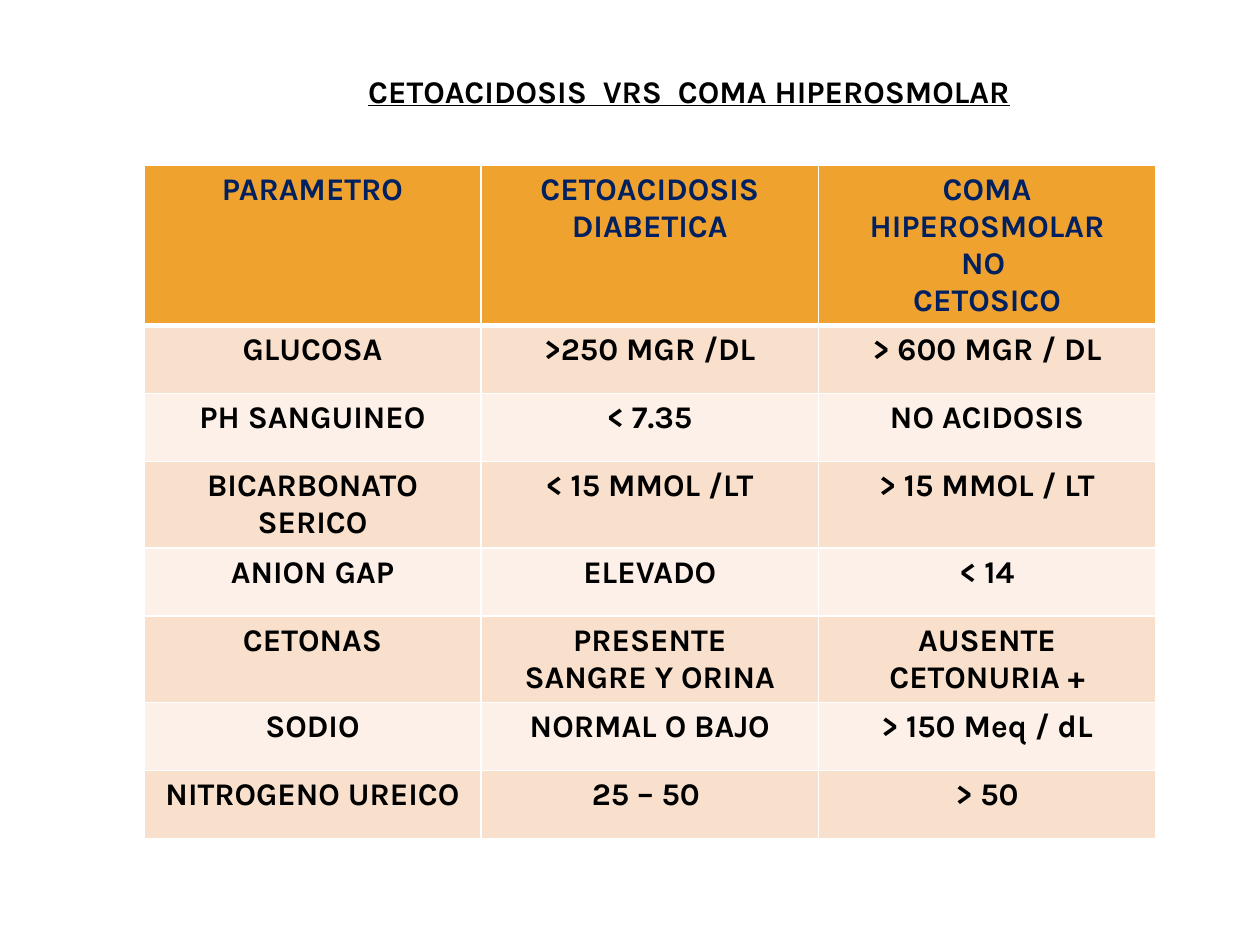
from dataclasses import dataclass

from lxml import etree
from pptx import Presentation
from pptx.dml.color import RGBColor
from pptx.enum.text import MSO_ANCHOR, MSO_AUTO_SIZE, PP_ALIGN
from pptx.oxml.ns import qn
from pptx.util import Cm, Pt

CENTER = PP_ALIGN.CENTER
TOP = MSO_ANCHOR.TOP
NO_AUTOFIT = MSO_AUTO_SIZE.NONE
TITLE_ONLY = 5


@dataclass(frozen=True)
class Theme:
    font: str = "Karla"
    size: int = 18
    text: str = "000000"
    header_text: str = "002060"
    header_fill: str = "F0A22E"
    bands: tuple = ("F9E0CD", "FCF0E8")
    border: str = "FFFFFF"
    thin: int = 1
    thick: int = 3


THEME = Theme()

TITLE = "CETOACIDOSIS  VRS  COMA HIPEROSMOLAR"
ROWS = [
    ("PARAMETRO", "CETOACIDOSIS\nDIABETICA", "COMA HIPEROSMOLAR\nNO \nCETOSICO"),
    ("GLUCOSA", ">250 MGR /DL", "> 600 MGR / DL"),
    ("PH SANGUINEO", "< 7.35", "NO ACIDOSIS"),
    ("BICARBONATO SERICO", "< 15 MMOL /LT", "> 15 MMOL / LT"),
    ("ANION GAP", "ELEVADO", "< 14"),
    ("CETONAS", "PRESENTE\nSANGRE Y ORINA", "AUSENTE\nCETONURIA +"),
    ("SODIO", "NORMAL O BAJO", "> 150 Meq / dL"),
    ("NITROGENO UREICO", "25 – 50 ", "> 50"),
]
HEADER_HEIGHT = Cm(3)
ROW_HEIGHT = Cm(1.37)


def format_text(text_frame, color, underline=None):
    for paragraph in text_frame.paragraphs:
        paragraph.alignment = CENTER
        font = paragraph.font
        font.name = THEME.font
        font.size = Pt(THEME.size)
        font.bold = True
        font.underline = underline
        font.color.rgb = RGBColor.from_string(color)


def add_borders(cell, top, bottom):
    properties = cell._tc.get_or_add_tcPr()
    widths = {"lnL": THEME.thin, "lnR": THEME.thin, "lnT": top, "lnB": bottom}
    for tag, width in widths.items():
        line = etree.SubElement(properties, qn(f"a:{tag}"), w=str(Pt(width)))
        fill = etree.SubElement(line, qn("a:solidFill"))
        etree.SubElement(fill, qn("a:srgbClr"), val=THEME.border)


def place_title(slide, left, top, width, height):
    title = slide.shapes.title
    title.left, title.top, title.width, title.height = left, top, width, height
    text_frame = title.text_frame
    text_frame.text = TITLE
    text_frame.word_wrap = True
    text_frame.auto_size = NO_AUTOFIT
    text_frame.vertical_anchor = TOP
    format_text(text_frame, THEME.text, underline=True)


def format_cell(cell, text, row_index):
    is_header = row_index == 0
    cell.text = text
    cell.vertical_anchor = TOP
    add_borders(
        cell,
        top=THEME.thick if row_index == 1 else THEME.thin,
        bottom=THEME.thick if is_header else THEME.thin,
    )
    band = THEME.bands[(row_index - 1) % len(THEME.bands)]
    cell.fill.solid()
    cell.fill.fore_color.rgb = RGBColor.from_string(
        THEME.header_fill if is_header else band
    )
    format_text(cell.text_frame, THEME.header_text if is_header else THEME.text)


def place_comparison(slide, left, top, width):
    height = HEADER_HEIGHT + ROW_HEIGHT * (len(ROWS) - 1)
    frame = slide.shapes.add_table(len(ROWS), len(ROWS[0]), left, top, width, height)
    table = frame.table
    for row_index, texts in enumerate(ROWS):
        table.rows[row_index].height = ROW_HEIGHT if row_index else HEADER_HEIGHT
        for column_index, text in enumerate(texts):
            format_cell(table.cell(row_index, column_index), text, row_index)


def main():
    presentation = Presentation()
    presentation.slide_width = Cm(25.4)
    presentation.slide_height = Cm(19.05)
    slide = presentation.slides.add_slide(presentation.slide_layouts[TITLE_ONLY])
    place_comparison(slide, Cm(2.9), Cm(3.33), Cm(20.4))
    place_title(slide, Cm(5.89), Cm(1.32), Cm(16), Cm(1.02))
    presentation.save("out.pptx")


if __name__ == "__main__":
    main()
